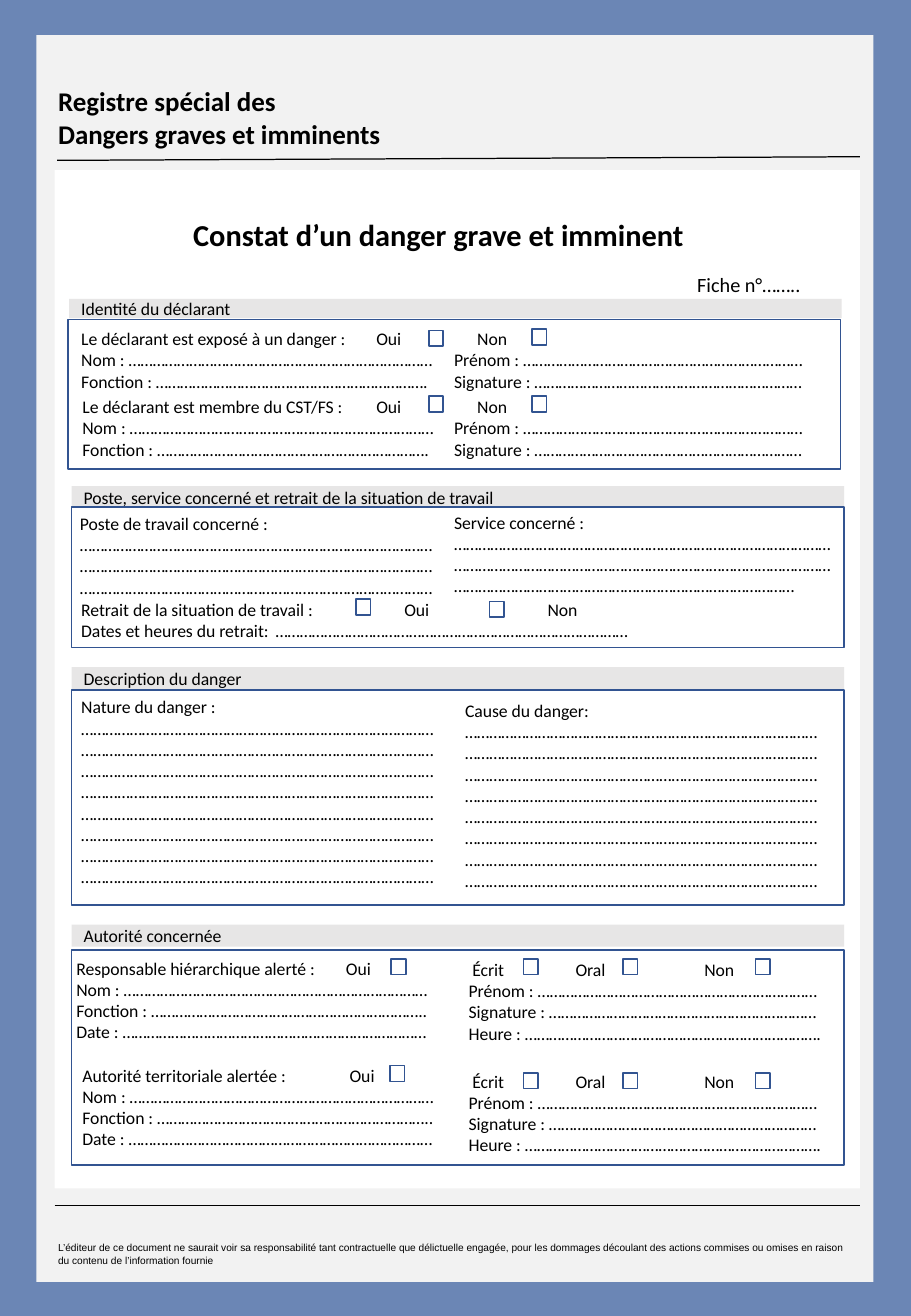
from lxml import etree
from pptx import Presentation
from pptx.dml.color import RGBColor
from pptx.enum import shapes, text
from pptx.oxml import ns
from pptx.util import Inches, Pt

THEME = {
    "background": "6B86B5", "page": "F2F2F2", "sheet": "FFFFFF", "band": "E7E6E6",
    "frame": "325491", "ink": "000000", "font": "Calibri", "legal_font": "Arial",
    "title": 18, "heading": 16, "number": 12, "body": 10.5, "legal": 6,
    "frame_width": 1, "rule_width": 0.75,
}
BOX_SIZE = (0.12, 0.13)
SECTION_WIDTH = 6.36
COLUMN_WIDTH = 3.18
FULL_LINE = "…" * 29

PANELS = [("page", 0.3, 0.29, 6.89, 10.26), ("sheet", 0.45, 1.4, 6.63, 8.38)]
RULES = [(0.45, 9.92, 7.08, 9.92), (0.47, 1.32, 7.08, 1.29)]

HEADINGS = [
    (["Registre spécial des", "Dangers graves et imminents"],
     (0.38, 0.65, 6.29, 0.64), "heading", "font", True, "LEFT"),
    (["L’éditeur de ce document ne saurait voir sa responsabilité tant contractuelle "
      "que délictuelle engagée, pour les dommages découlant des actions commises ou "
      "omises en raison du contenu de l’information fournie"],
     (0.38, 10.17, 6.74, 0.3), "legal", "legal_font", False, "LEFT"),
    (["Constat d’un danger grave et imminent"],
     (1.04, 1.73, 5.14, 0.4), "title", "font", True, "CENTER"),
    (["Fiche n°…….."], (0.59, 2.19, 6.1, 0.3), "number", "font", False, "RIGHT"),
]

SECTIONS = [
    ("Identité du déclarant", 0.57, 2.46, 0.16, 0.56, 2.63, 1.23),
    ("Poste, service concerné et retrait de la situation de travail",
     0.59, 4.0, 0.18, 0.59, 4.17, 1.16),
    ("Description du danger", 0.59, 5.49, 0.18, 0.59, 5.68, 1.77),
    ("Autorité concernée", 0.59, 7.61, 0.18, 0.59, 7.82, 1.77),
]

NAME = "Nom : " + "…" * 25
FIRST_NAME = "Prénom : " + "…" * 23
SIGNATURE = "Signature : " + "…" * 22
DECLARANT = [NAME, "Fonction : " + "…" * 22 + "."]
DECLARANT_RIGHT = ["\tNon", FIRST_NAME, SIGNATURE]
AUTHORITY = [NAME, "Fonction : " + "…" * 22 + "..", "Date : " + "…" * 25]
AUTHORITY_RIGHT = ["\tÉcrit\tOral\tNon", FIRST_NAME, SIGNATURE,
                   "Heure : " + "…" * 24 + "."]
AUTHORITY_TABS = (0.03, 0.88, 1.94)

FIELDS = [
    (["Le déclarant est exposé à un danger :\tOui"] + DECLARANT,
     (0.57, 2.65, COLUMN_WIDTH, 0.81), (2.43,)),
    (DECLARANT_RIGHT, (3.64, 2.65, COLUMN_WIDTH, 0.81), (0.19,)),
    (["Le déclarant est membre du CST/FS :\tOui"] + DECLARANT,
     (0.58, 3.21, COLUMN_WIDTH, 0.81), (2.42,)),
    (DECLARANT_RIGHT, (3.64, 3.21, COLUMN_WIDTH, 0.81), (0.19,)),
    (["Poste de travail concerné : " + FULL_LINE * 3],
     (0.56, 4.17, COLUMN_WIDTH, 0.81), ()),
    (["Service concerné :", "…" * 90], (3.64, 4.16, 3.3, 0.81), ()),
    (["Retrait de la situation de travail :\tOui\tNon",
      "Dates et heures du retrait:\t" + FULL_LINE],
     (0.57, 4.88, 6.25, 0.45), (1.6, 2.66, 3.84)),
    (["Nature du danger : " + FULL_LINE * 8], (0.57, 5.68, COLUMN_WIDTH, 1.69), ()),
    (["Cause du danger: " + FULL_LINE * 8], (3.73, 5.71, COLUMN_WIDTH, 1.69), ()),
    (["Responsable hiérarchique alerté :\tOui"] + AUTHORITY,
     (0.53, 7.83, COLUMN_WIDTH, 0.98), (2.22,)),
    (AUTHORITY_RIGHT, (3.76, 7.84, COLUMN_WIDTH, 0.81), AUTHORITY_TABS),
    (["Autorité territoriale alertée :\tOui"] + AUTHORITY,
     (0.58, 8.71, COLUMN_WIDTH, 0.98), (2.2,)),
    (AUTHORITY_RIGHT, (3.76, 8.76, COLUMN_WIDTH, 0.81), AUTHORITY_TABS),
]

CHECKBOXES = [
    (2.72, (3.53,)), (2.71, (4.38,)), (3.26, (3.53, 4.38)),
    (4.93, (2.93,)), (4.95, (4.03,)),
    (7.89, (3.22, 4.31, 5.13, 6.22)), (8.77, (3.21,)), (8.83, (4.31, 5.13, 6.22)),
]


def color(name):
    return RGBColor.from_string(THEME[name])


def apply(target, values):
    for name, value in values.items():
        setattr(target, name, value)


def add_box(slide, place, fill=None, line=None):
    shape = slide.shapes.add_shape(shapes.MSO_SHAPE.RECTANGLE, *map(Inches, place))
    shape.shadow.inherit = False
    if fill:
        shape.fill.solid()
        shape.fill.fore_color.rgb = color(fill)
    else:
        shape.fill.background()
    if line:
        shape.line.color.rgb = color(line)
        shape.line.width = Pt(THEME["frame_width"])
    else:
        shape.line.fill.background()
    return shape


def add_tabs(paragraph, stops):
    properties = paragraph._p.get_or_add_pPr()
    tab_list = etree.SubElement(properties, ns.qn("a:tabLst"))
    for stop in stops:
        etree.SubElement(tab_list, ns.qn("a:tab"), pos=str(Inches(stop)), algn="l")


def write(frame, lines, size="body", font="font", bold=False, align="LEFT", tabs=()):
    frame.word_wrap = True
    for index, line in enumerate(lines):
        paragraph = frame.add_paragraph() if index else frame.paragraphs[0]
        paragraph.alignment = getattr(text.PP_ALIGN, align)
        stops = [stop for stop in tabs if index == 0 or stop == tabs[0]]
        if "\t" in line:
            add_tabs(paragraph, stops if index else select_tabs(line, tabs))
        run = paragraph.add_run()
        run.text = line
        apply(run.font, {"name": THEME[font], "size": Pt(THEME[size]), "bold": bold})
        run.font.color.rgb = color("ink")


def select_tabs(line, tabs):
    return tabs[-line.count("\t"):]


def add_text(slide, place, lines, **style):
    write(slide.shapes.add_textbox(*map(Inches, place)).text_frame, lines, **style)


def add_rule(slide, ends):
    rule = slide.shapes.add_connector(shapes.MSO_CONNECTOR.STRAIGHT, *map(Inches, ends))
    rule.line.color.rgb = color("ink")
    rule.line.width = Pt(THEME["rule_width"])
    etree.SubElement(rule._element.spPr, ns.qn("a:effectLst"))


def add_section(slide, section):
    label, band_left, band_top, band_height, left, top, height = section
    band = add_box(slide, (band_left, band_top, SECTION_WIDTH, band_height), fill="band")
    apply(band.text_frame, {"margin_top": 0, "margin_bottom": 0,
                            "vertical_anchor": text.MSO_ANCHOR.MIDDLE})
    write(band.text_frame, [label])
    add_box(slide, (left, top, SECTION_WIDTH, height), line="frame")


def main():
    presentation = Presentation()
    apply(presentation, {"slide_width": Inches(7.5), "slide_height": Inches(10.83)})
    slide = presentation.slides.add_slide(presentation.slide_layouts[6])
    slide.background.fill.solid()
    slide.background.fill.fore_color.rgb = color("background")
    for fill, *place in PANELS:
        add_box(slide, place, fill=fill)
    for ends in RULES:
        add_rule(slide, ends)
    for lines, place, size, font, bold, align in HEADINGS:
        add_text(slide, place, lines, size=size, font=font, bold=bold, align=align)
    for section in SECTIONS:
        add_section(slide, section)
    for lines, place, tabs in FIELDS:
        add_text(slide, place, lines, tabs=tabs)
    for top, lefts in CHECKBOXES:
        for left in lefts:
            add_box(slide, (left, top, *BOX_SIZE), line="frame")
    presentation.save("out.pptx")


if __name__ == "__main__":
    main()
